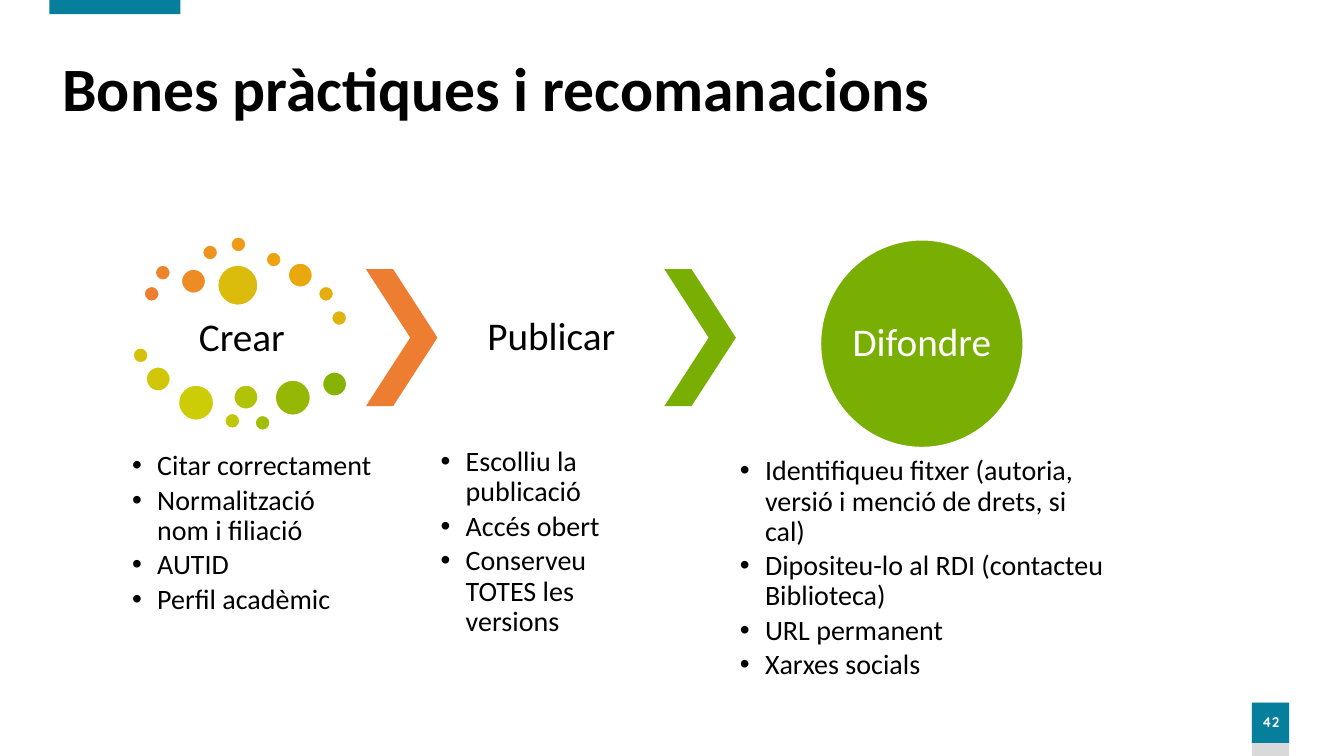
from dataclasses import dataclass
from typing import Any

from lxml.etree import SubElement
from pptx import Presentation
from pptx.dml.color import RGBColor
from pptx.enum.shapes import MSO_SHAPE as Preset
from pptx.enum.text import MSO_ANCHOR as Anchor, MSO_AUTO_SIZE as AutoSize, PP_ALIGN as Align
from pptx.oxml.ns import qn
from pptx.util import Inches, Pt

GRID = Inches(0.1)
COLUMNS, ROWS = 133.33, 75

COLOURS = {
    "black": "000000",
    "white": "FFFFFF",
    "teal": "067F9C",
    "grey": "D9D9D9",
    "orange": "ED7D31",
    "amber": "EFA210",
    "lime": "CCCD07",
    "leaf": "86B303",
    "green": "79AE02",
}
DOT_STOPS = ((0, "orange"), (5, "amber"), (12, "lime"), (17, "leaf"))
SMALL, MEDIUM, LARGE, HUGE = 1.5, 2.4, 3.5, 4


@dataclass(frozen=True)
class Area:
    column: float
    row: float
    columns: float
    rows: float

    def lengths(self) -> list[int]:
        return [round(GRID * n) for n in (self.column, self.row, self.columns, self.rows)]


@dataclass(frozen=True)
class Figure:
    preset: Preset
    area: Area
    colour: str


@dataclass(frozen=True)
class Label:
    text: str
    size: float
    colour: str
    font: str = "Calibri"
    bold: bool = False


@dataclass(frozen=True)
class Advice:
    area: Area
    items: tuple[str, ...]


BARS = (
    Figure(Preset.RECTANGLE, Area(124.2, 69.7, 3.7, 5.3), "grey"),
    Figure(Preset.RECTANGLE, Area(4.9, 0, 13, 1.4), "teal"),
)
PAGE_NUMBER = Figure(Preset.RECTANGLE, Area(124.2, 69.7, 3.7, 4), "teal")
SPREAD_DISC = Figure(Preset.OVAL, Area(81.4, 23.8, 20.1, 20.6), "green")
CHEVRONS = (
    Figure(Preset.CHEVRON, Area(36.3, 26.7, 7.1, 13.6), "orange"),
    Figure(Preset.CHEVRON, Area(65.9, 26.7, 7.1, 13.6), "green"),
)
DOTS = (
    (14.3, 28.4, SMALL), (15.4, 26.3, SMALL), (18, 26.7, MEDIUM),
    (20.1, 24.3, SMALL), (22.9, 23.5, SMALL), (26.4, 25, SMALL),
    (28.6, 26.1, MEDIUM), (31.6, 28.4, SMALL), (32.9, 30.8, SMALL),
    (21.6, 26.3, HUGE), (13.2, 34.5, SMALL), (14.5, 36.4, MEDIUM),
    (17.7, 38.2, LARGE), (22.3, 41, SMALL), (23.2, 38.2, MEDIUM),
    (25.3, 41.2, SMALL), (27.3, 37.7, LARGE), (32, 36.9, MEDIUM),
)
STEPS = (
    (Area(14.3, 30.4, 19.4, 6.4), Label("Crear", 28, "black")),
    (Area(45, 26.7, 19.4, 13.6), Label("Publicar", 28, "black")),
)
ADVICE = (
    Advice(Area(12.8, 44.5, 24.5, 17.7), (
        "Citar correctament", "Normalització nom i filiació", "AUTID", "Perfil acadèmic")),
    Advice(Area(43.4, 44.1, 22.5, 12), (
        "Escolliu la publicació", "Accés obert", "Conserveu TOTES les versions")),
    Advice(Area(73.1, 45, 37.3, 12), (
        "Identifiqueu fitxer (autoria, versió i menció de drets, si cal)",
        "Dipositeu-lo al RDI (contacteu Biblioteca)", "URL permanent", "Xarxes socials")),
)


def apply(target: Any, formats: dict[str, Any]) -> None:
    for name, value in formats.items():
        setattr(target, name, value)


def place(shape: Any, area: Area) -> None:
    apply(shape, dict(zip(("left", "top", "width", "height"), area.lengths())))


def rgb(name: str) -> RGBColor:
    return RGBColor.from_string(COLOURS[name])


def dot_colour(index: int) -> RGBColor:
    start, end = next(pair for pair in zip(DOT_STOPS, DOT_STOPS[1:]) if index <= pair[1][0])
    share = (index - start[0]) / (end[0] - start[0])
    return RGBColor(*(round(a + (b - a) * share) for a, b in zip(rgb(start[1]), rgb(end[1]))))


def draw_figure(page: Any, figure: Figure, fill: RGBColor | None = None) -> Any:
    shape = page.shapes.add_shape(figure.preset, *figure.area.lengths())
    shape.shadow.inherit = False
    shape.fill.solid()
    shape.fill.fore_color.rgb = fill or rgb(figure.colour)
    if figure.preset == Preset.OVAL:
        shape.line.color.rgb = rgb("white")
        shape.line.width = Pt(1)
    else:
        shape.line.fill.background()
    return shape


def prepare_frame(frame: Any, inset: float, anchor: Anchor) -> None:
    margins = {f"margin_{side}": Inches(inset) for side in ("left", "top", "right", "bottom")}
    apply(frame, margins | {
        "word_wrap": True, "auto_size": AutoSize.NONE, "vertical_anchor": anchor})


def write(para: Any, label: Label, formats: dict[str, Any]) -> None:
    span = para.add_run()
    span.text = label.text
    apply(span.font, {"name": label.font, "size": Pt(label.size), "bold": label.bold})
    span.font.color.rgb = rgb(label.colour)
    apply(para, formats)


def write_centred(shape: Any, label: Label, inset: float) -> None:
    prepare_frame(shape.text_frame, inset, Anchor.MIDDLE)
    write(shape.text_frame.paragraphs[0], label,
          {"alignment": Align.CENTER, "line_spacing": 0.9})


def add_bullet(para: Any) -> None:
    properties = para._p.get_or_add_pPr()
    properties.set("marL", str(Inches(0.25)))
    properties.set("indent", str(-Inches(0.25)))
    SubElement(properties, qn("a:buFont")).set("typeface", "Arial")
    SubElement(properties, qn("a:buChar")).set("char", "•")


def draw_advice(page: Any, advice: Advice) -> None:
    frame = page.shapes.add_textbox(*advice.area.lengths()).text_frame
    prepare_frame(frame, 0.03, Anchor.TOP)
    for index, item in enumerate(advice.items):
        para = frame.add_paragraph() if index else frame.paragraphs[0]
        write(para, Label(item, 20, "black"), {"line_spacing": 0.9, "space_after": Pt(3)})
        add_bullet(para)


def draw_title(page: Any) -> None:
    title = page.shapes.title
    place(title, Area(5.2, 4.4, 96.6, 8.4))
    apply(title.text_frame, {
        "word_wrap": True, "auto_size": AutoSize.NONE, "vertical_anchor": Anchor.MIDDLE})
    write(title.text_frame.paragraphs[0],
          Label("Bones pràctiques i recomanacions", 44, "black", bold=True),
          {"alignment": Align.LEFT})


def main() -> None:
    deck = Presentation()
    apply(deck, {"slide_width": round(GRID * COLUMNS), "slide_height": GRID * ROWS})
    page = deck.slides.add_slide(deck.slide_layouts[5])
    draw_title(page)
    for bar in BARS:
        draw_figure(page, bar)
    write_centred(draw_figure(page, PAGE_NUMBER),
                  Label("42", 10, "white", "Quicksand", True), 0)
    for index, (column, row, size) in enumerate(DOTS):
        dot = Figure(Preset.OVAL, Area(column, row, size, size), "orange")
        draw_figure(page, dot, dot_colour(index))
    for chevron in CHEVRONS:
        draw_figure(page, chevron).adjustments[0] = 0.62
    for area, label in STEPS:
        write_centred(page.shapes.add_textbox(*area.lengths()), label, 0.04)
    write_centred(draw_figure(page, SPREAD_DISC), Label("Difondre", 28, "white"), 0)
    for advice in ADVICE:
        draw_advice(page, advice)
    deck.save("out.pptx")


if __name__ == "__main__":
    main()
